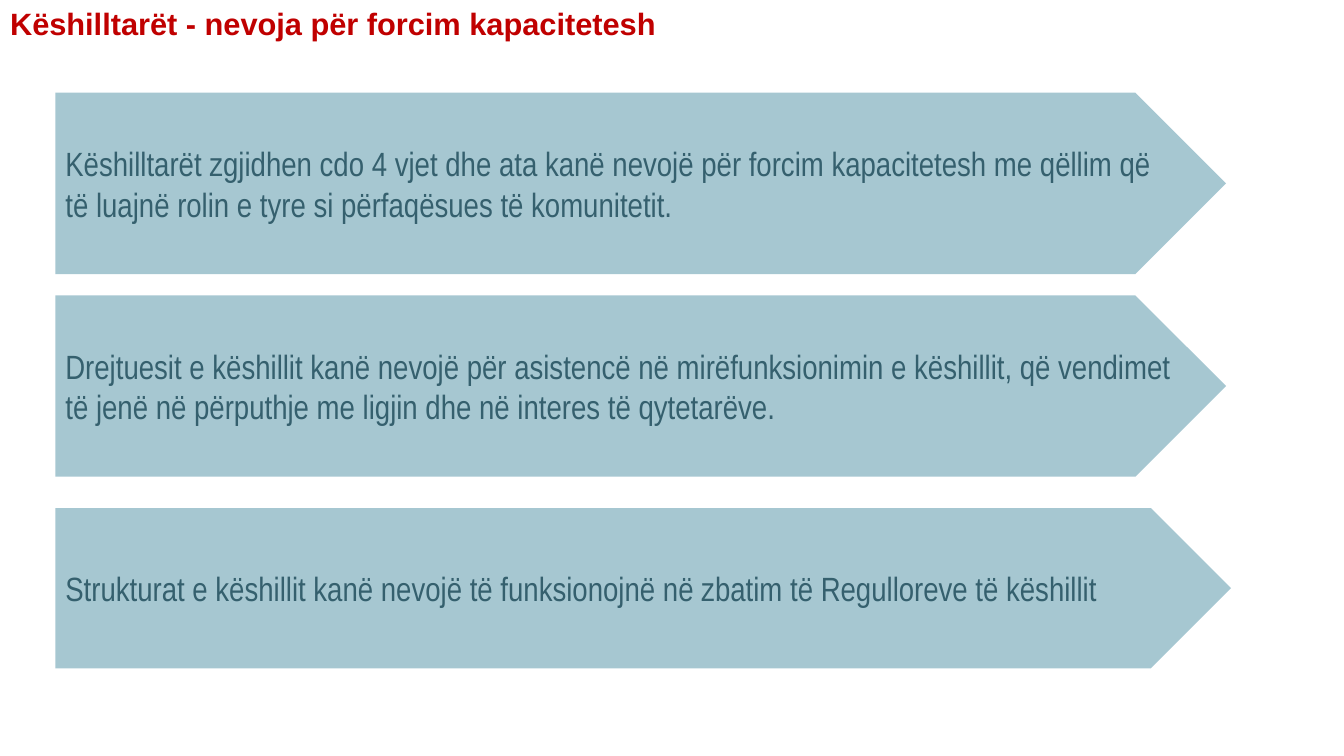
import pptx
import pptx.dml.color
import pptx.enum.shapes
import pptx.enum.text
import pptx.oxml
import pptx.oxml.ns
import pptx.util

EMU_PER_PX = 9144


def px(length):
    """Turn px, at 100 to the inch, into EMU."""
    return pptx.util.Emu(length * EMU_PER_PX)


def color(hex_string):
    """Turn a hex string into a colour."""
    return pptx.dml.color.RGBColor.from_string(hex_string)


class SlideBuilder:
    """Holds the style and the current slide."""

    title_font, title_size, title_color = "Arial", 22, "C00000"
    body_font, body_size, body_color = "Arial Narrow", 24, "35606E"
    arrow_color, arrow_opacity = "4F90A5", 50

    def __init__(self, presentation):
        """Add a title-only slide."""
        self.slide = presentation.slides.add_slide(presentation.slide_layouts[5])

    def set_text(self, shape, text, font, size, hex_string, bold=False):
        """Put one left-aligned paragraph into a shape."""
        frame = shape.text_frame
        frame.word_wrap = True
        frame.vertical_anchor = pptx.enum.text.MSO_ANCHOR.MIDDLE
        frame.text = text
        paragraph = frame.paragraphs[0]
        paragraph.alignment = pptx.enum.text.PP_ALIGN.LEFT
        paragraph.font.name = font
        paragraph.font.size = pptx.util.Pt(size)
        paragraph.font.bold = bold
        paragraph.font.color.rgb = color(hex_string)

    def title(self, text, left, top, width, height):
        """Place and format the title."""
        shape = self.slide.shapes.title
        shape.left, shape.top = px(left), px(top)
        shape.width, shape.height = px(width), px(height)
        self.set_text(shape, text, self.title_font, self.title_size, self.title_color, True)
        shape.text_frame.auto_size = pptx.enum.text.MSO_AUTO_SIZE.SHAPE_TO_FIT_TEXT

    def arrow(self, text, left, top, width, height):
        """Draw a translucent pentagon arrow with text."""
        shape = self.slide.shapes.add_shape(
            pptx.enum.shapes.MSO_SHAPE.PENTAGON, px(left), px(top), px(width), px(height)
        )
        shape.shadow.inherit = False
        shape.line.fill.background()
        shape.fill.solid()
        shape.fill.fore_color.rgb = color(self.arrow_color)
        fill_color = shape.element.spPr.find(".//" + pptx.oxml.ns.qn("a:srgbClr"))
        alpha = pptx.oxml.parse_xml(
            f'<a:alpha {pptx.oxml.ns.nsdecls("a")} val="{self.arrow_opacity * 1000}"/>'
        )
        fill_color.append(alpha)
        self.set_text(shape, text, self.body_font, self.body_size, self.body_color)


def main():
    """Build the slide and save it."""
    presentation = pptx.Presentation()
    presentation.slide_width, presentation.slide_height = px(1333), px(750)
    builder = SlideBuilder(presentation)
    builder.title("Këshilltarët - nevoja për forcim kapacitetesh", 0, 0, 1333, 47)

    arrows = [
        ("Këshilltarët zgjidhen cdo 4 vjet dhe ata kanë nevojë për forcim kapacitetesh "
         "me qëllim që të luajnë rolin e tyre si përfaqësues të komunitetit.", 92, 1161, 180),
        ("Drejtuesit e këshillit kanë nevojë për asistencë në mirëfunksionimin e këshillit, "
         "që vendimet të jenë në përputhje me ligjin dhe në interes të qytetarëve.", 293, 1161, 180),
        ("Strukturat e këshillit kanë nevojë të funksionojnë në zbatim të Regulloreve "
         "të këshillit", 504, 1166, 159),
    ]
    for text, top, width, height in arrows:
        builder.arrow(text, 55, top, width, height)

    presentation.save("out.pptx")


if __name__ == "__main__":
    main()
